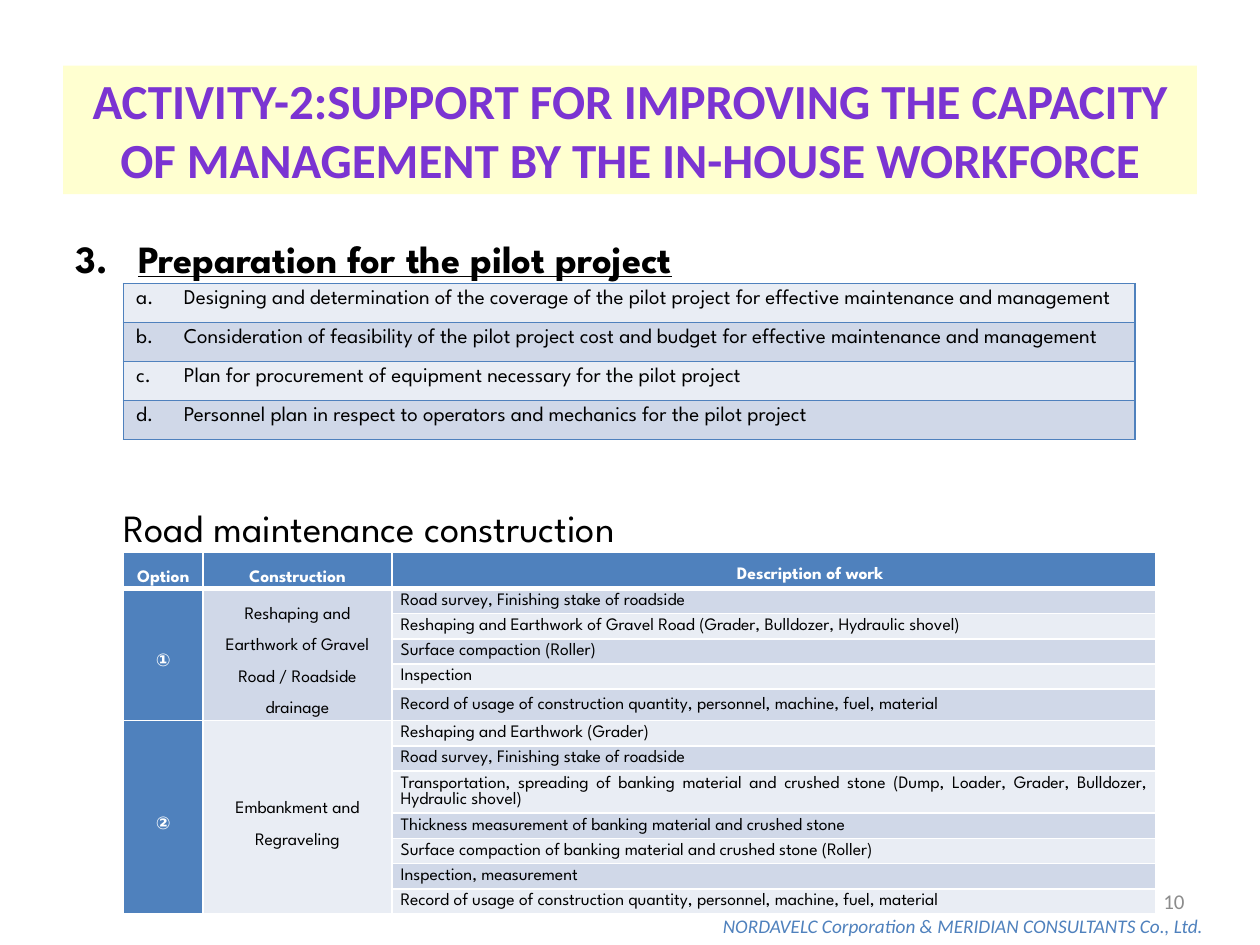
from lxml import etree
from pptx import Presentation, util as u
from pptx.dml.color import RGBColor
from pptx.enum import text
from pptx.oxml.ns import qn

THEME = {
    "body_font": "League Spartan", "frame_font": "Calibri",
    "black": "000000", "white": "FFFFFF", "blue": "4F81BD", "grey": "8C8C8C",
    "purple": "7B34D2", "yellow": "FFFF66", "bands": ("E9EDF4", "D0D8E8"),
    "title": 28, "heading": 22, "task": 12, "work": 10, "number": 12, "footer": 11,
}
LEFT, CENTER, RIGHT, JUSTIFY = (
    text.PP_ALIGN.LEFT, text.PP_ALIGN.CENTER, text.PP_ALIGN.RIGHT, text.PP_ALIGN.JUSTIFY)
TOP, MIDDLE = text.MSO_ANCHOR.TOP, text.MSO_ANCHOR.MIDDLE

TITLE = "ACTIVITY-2:SUPPORT FOR IMPROVING THE CAPACITY OF MANAGEMENT BY THE IN-HOUSE WORKFORCE"
HEADING = "Preparation for the pilot project"
SUBHEADING = "Road maintenance construction"
FOOTER = "NORDAVELC Corporation & MERIDIAN CONSULTANTS Co., Ltd."
PAGE = "10"
TASKS = [
    "Designing and determination of the coverage of the pilot project for effective maintenance and management",
    "Consideration of feasibility of the pilot project cost and budget for effective maintenance and management",
    "Plan for procurement of equipment necessary for the pilot project",
    "Personnel plan in respect to operators and mechanics for the pilot project",
]
WORK_HEADER = ["Option", "Construction", "Description of work"]
SURVEY = "Road survey, Finishing stake of roadside"
RECORD = "Record of usage of construction quantity, personnel, machine, fuel, material"
OPTIONS = [
    ("①", "Reshaping and Earthwork of Gravel Road / Roadside drainage", [
        SURVEY,
        "Reshaping and Earthwork of Gravel Road (Grader, Bulldozer, Hydraulic shovel)",
        "Surface compaction (Roller)",
        "Inspection",
        RECORD,
    ]),
    ("②", "Embankment and Regraveling", [
        "Reshaping and Earthwork (Grader)",
        SURVEY,
        "Transportation, spreading of banking material and crushed stone "
        "(Dump, Loader, Grader, Bulldozer, Hydraulic shovel)",
        "Thickness measurement of banking material and crushed stone",
        "Surface compaction of banking material and crushed stone (Roller)",
        "Inspection, measurement",
        RECORD,
    ]),
]
WORK_COLUMNS = [0.63, 1.5, 6.06]
HEADER_HEIGHT, WORK_HEIGHT = 0.29, 0.2
TALL_ROWS = {5: 0.25, 8: 0.29}


def rgb(name):
    return RGBColor.from_string(THEME.get(name, name))


def write(frame, words, size, color, font="body_font", align=LEFT,
          bold=False, italic=False, underline=False):
    frame.word_wrap = True
    frame.text = words
    line = frame.paragraphs[0]
    line.alignment = align
    for run in line.runs:
        run.font.size = u.Pt(THEME[size])
        run.font.name = THEME[font]
        run.font.color.rgb = rgb(color)
        run.font.bold, run.font.italic, run.font.underline = bold, italic, underline
    return line


def number(line, style, start, indent):
    props = line._p.get_or_add_pPr()
    props.set("marL", str(u.Inches(indent)))
    props.set("indent", str(-u.Inches(indent)))
    etree.SubElement(props, qn("a:buFont"), typeface="+mj-lt")
    etree.SubElement(props, qn("a:buAutoNum"), type=style, startAt=str(start))


def add_label(slide, box, *args, **style):
    label = slide.shapes.add_textbox(*map(u.Inches, box))
    return write(label.text_frame, *args, **style)


def paint(cell, fill, border, bottom=1):
    props = cell._tc.get_or_add_tcPr()
    for side, width in (("L", 1), ("R", 1), ("T", 1), ("B", bottom)):
        edge = etree.SubElement(props, qn("a:ln" + side), w=str(u.Pt(width)))
        solid = etree.SubElement(edge, qn("a:solidFill"))
        etree.SubElement(solid, qn("a:srgbClr"), val=THEME[border])
    cell.fill.solid()
    cell.fill.fore_color.rgb = rgb(fill)


def add_table(slide, left, top, columns, rows):
    table = slide.shapes.add_table(
        len(rows), len(columns),
        *map(u.Inches, (left, top, sum(columns), sum(rows)))).table
    for column, width in zip(table.columns, columns):
        column.width = u.Inches(width)
    for row, height in zip(table.rows, rows):
        row.height = u.Inches(height)
    return table


def add_title(slide):
    title = slide.shapes.title
    title.left, title.top, title.width, title.height = map(u.Inches, (0.5, 0.52, 9, 1.02))
    title.fill.solid()
    title.fill.fore_color.rgb = rgb("yellow")
    tint = title._element.spPr.find(".//" + qn("a:srgbClr"))
    etree.SubElement(tint, qn("a:alpha"), val="30000")
    title.text_frame.auto_size = text.MSO_AUTO_SIZE.NONE
    title.text_frame.vertical_anchor = MIDDLE
    write(title.text_frame, TITLE, "title", "purple", "frame_font", CENTER, bold=True)


def add_tasks(slide):
    table = add_table(slide, 0.98, 2.25, [8.03], [0.31] * len(TASKS))
    for index, task in enumerate(TASKS):
        cell = table.cell(index, 0)
        paint(cell, THEME["bands"][index % 2], "blue")
        line = write(cell.text_frame, task, "task", "black")
        number(line, "alphaLcPeriod", index + 1, 0.38)


def add_work(slide):
    grid = [WORK_HEADER]
    merges = []
    for option, construction, steps in OPTIONS:
        merges.append((len(grid), len(grid) + len(steps) - 1))
        grid += [[option if i == 0 else "", construction if i == 0 else "", step]
                 for i, step in enumerate(steps)]
    heights = [HEADER_HEIGHT] + [TALL_ROWS.get(r, WORK_HEIGHT) for r in range(1, len(grid))]
    table = add_table(slide, 0.98, 4.38, WORK_COLUMNS, heights)
    for r, row in enumerate(grid):
        for c, words in enumerate(row):
            cell = table.cell(r, c)
            strong = r == 0 or c == 0
            band = r
            if c == 1:
                band = next((first for first, last in merges if first <= r <= last), 0)
            paint(cell, "blue" if strong else THEME["bands"][band % 2], "white",
                  bottom=3 if r == 0 else 1)
            cell.margin_left = cell.margin_right = u.Inches(0.07)
            cell.margin_top = cell.margin_bottom = 0
            cell.vertical_anchor = TOP if r == 0 and c == 2 else MIDDLE
            line = write(cell.text_frame, words, "work", "white" if strong else "black",
                         align=JUSTIFY if r and c == 2 else CENTER, bold=strong)
            if words and (r == 0 or c < 2):
                line.line_spacing = u.Pt(18)
            if not words:
                etree.SubElement(line._p, qn("a:endParaRPr"), sz=str(THEME["work"] * 100))
    table.cell(0, 2).text_frame.paragraphs[0]._p.get_or_add_pPr().set(
        "marL", str(u.Inches(0.58)))
    for first, last in merges:
        for c in (0, 1):
            table.cell(first, c).merge(table.cell(last, c))


def main():
    deck = Presentation()
    deck.slide_width, deck.slide_height = u.Inches(10), u.Inches(7.5)
    slide = deck.slides.add_slide(deck.slide_layouts[5])
    add_title(slide)
    heading = add_label(slide, (0.5, 1.82, 8.17, 0.4), HEADING, "heading", "black",
                        bold=True, underline=True)
    number(heading, "arabicPeriod", 3, 0.5)
    add_tasks(slide)
    add_label(slide, (0.88, 3.95, 7.79, 0.4), SUBHEADING, "heading", "black")
    add_work(slide)
    add_label(slide, (7.17, 7, 2.33, 0.3), PAGE, "number", "grey", "frame_font", RIGHT)
    add_label(slide, (4.65, 7.21, 5, 0.29), FOOTER, "footer", "blue", "frame_font",
              RIGHT, italic=True)
    deck.save("out.pptx")


if __name__ == "__main__":
    main()
